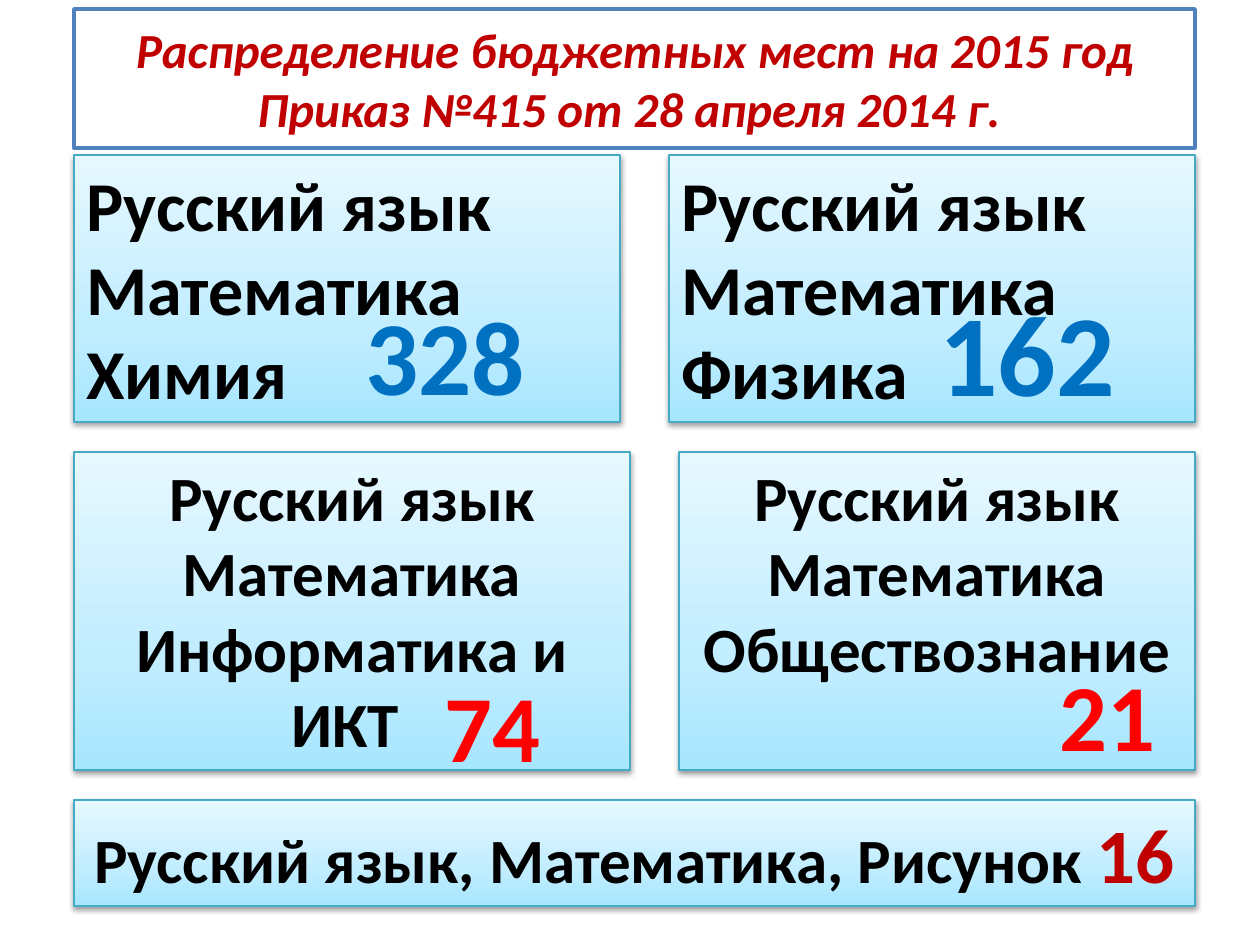
import copy
from dataclasses import dataclass

import lxml.etree
import pptx
import pptx.dml.color
import pptx.enum.shapes
import pptx.enum.text
import pptx.oxml.ns
import pptx.util

ALIGN = pptx.enum.text.PP_ALIGN
ANCHOR = pptx.enum.text.MSO_ANCHOR
EMU_PER_PX = 914400 / 126


@dataclass(frozen=True)
class Theme:
    font: str = "Calibri"
    text: str = "000000"
    accent: str = "C00000"
    blue: str = "0070C0"
    red: str = "FF0000"
    title_fill: str = "FFFFFF"
    title_line: str = "4F81BD"
    card_line: str = "46AAC5"
    card_stops: tuple = ((0, "A7E6FF"), (0.35, "C1EDFF"), (1, "E7F8FF"))
    title_size: int = 28
    large_size: int = 40
    medium_size: int = 36
    total_size: int = 44


THEME = Theme()
LEFT, RIGHT = 74, 1195
TOP_ROW, TOP_HEIGHT = 155, 267
LOWER_ROW, LOWER_HEIGHT = 452, 318


def px(*lengths):
    return [pptx.util.Emu(round(length * EMU_PER_PX)) for length in lengths]


def rgb(code):
    return pptx.dml.color.RGBColor.from_string(code)


def format_run(run, size, color, italic=False):
    run.font.name = THEME.font
    run.font.size = pptx.util.Pt(size)
    run.font.bold = True
    run.font.italic = italic
    run.font.color.rgb = rgb(color)


def write_lines(frame, lines, size, color, align, italic=False):
    frame.text = "\n".join(lines)
    for paragraph in frame.paragraphs:
        paragraph.alignment = align
        for run in paragraph.runs:
            format_run(run, size, color, italic)


def set_line(shape, color, width):
    shape.line.color.rgb = rgb(color)
    shape.line.width = pptx.util.Pt(width)


def fill_gradient(shape):
    """Fill from the darkest stop at the bottom to the lightest at the top."""
    shape.fill.gradient()
    shape.fill.gradient_angle = 90
    stop_list = shape._element.spPr.find(".//" + pptx.oxml.ns.qn("a:gsLst"))
    stop_list.insert(1, copy.deepcopy(stop_list[0]))
    for stop, (position, color) in zip(shape.fill.gradient_stops, THEME.card_stops):
        stop.position = position
        stop.color.rgb = rgb(color)


def add_soft_shadow(shape):
    shape.shadow.inherit = False
    qn = pptx.oxml.ns.qn
    effects = shape._element.spPr.find(qn("a:effectLst"))
    shadow = lxml.etree.SubElement(
        effects, qn("a:outerShdw"), blurRad="40000", dist="20000",
        dir="5400000", rotWithShape="0")
    color = lxml.etree.SubElement(shadow, qn("a:srgbClr"), val="000000")
    lxml.etree.SubElement(color, qn("a:alpha"), val="38000")


def add_title(slide, lines):
    title = slide.shapes.title
    title.left, title.top, title.width, title.height = px(LEFT, 9, RIGHT - LEFT, 139)
    title.fill.solid()
    title.fill.fore_color.rgb = rgb(THEME.title_fill)
    set_line(title, THEME.title_line, 2)
    frame = title.text_frame
    frame.auto_size = pptx.enum.text.MSO_AUTO_SIZE.NONE
    frame.vertical_anchor = ANCHOR.MIDDLE
    write_lines(frame, lines, THEME.title_size, THEME.accent, ALIGN.CENTER, True)


def add_card(slide, box, lines, size, align):
    card = slide.shapes.add_shape(pptx.enum.shapes.MSO_SHAPE.RECTANGLE, *px(*box))
    fill_gradient(card)
    set_line(card, THEME.card_line, 0.75)
    add_soft_shadow(card)
    frame = card.text_frame
    frame.word_wrap = True
    frame.vertical_anchor = ANCHOR.TOP
    write_lines(frame, lines, size, THEME.text, align)
    return card


def add_places(slide, box, count, size, color, wrap):
    """Put the number of funded places over its card."""
    frame = slide.shapes.add_textbox(*px(*box)).text_frame
    frame.word_wrap = wrap
    write_lines(frame, [count], size, color, ALIGN.LEFT)


def add_drawing_card(slide):
    card = add_card(slide, (LEFT, 800, RIGHT - LEFT, 106),
                    ["Русский язык, Математика, Рисунок "],
                    THEME.medium_size, ALIGN.CENTER)
    places = card.text_frame.paragraphs[0].add_run()
    places.text = "16"
    format_run(places, THEME.total_size, THEME.accent)


def main():
    presentation = pptx.Presentation()
    presentation.slide_width, presentation.slide_height = px(1260, 945)
    slide = presentation.slides.add_slide(presentation.slide_layouts[5])

    add_title(slide, ["Распределение бюджетных мест на 2015 год",
                      "Приказ №415 от 28 апреля 2014 г. "])

    common = ["Русский язык", "Математика"]
    top = (TOP_ROW, TOP_HEIGHT, THEME.large_size, ALIGN.LEFT)
    lower = (LOWER_ROW, LOWER_HEIGHT, THEME.medium_size, ALIGN.CENTER)
    for subject, left, right, (y, height, size, align) in (
        ("Химия", LEFT, 620, top),
        ("Физика", 669, RIGHT, top),
        ("Информатика и ИКТ ", LEFT, 630, lower),
        ("Обществознание", 679, RIGHT, lower),
    ):
        add_card(slide, (left, y, right - left, height),
                 common + [subject], size, align)

    for count, box, size, color, wrap in (
        ("74", (432, 662, 122, 127), 54, THEME.red, False),
        ("21", (1047, 651, 161, 127), 54, THEME.red, True),
        ("328", (353, 284, 318, 140), 60, THEME.blue, True),
        ("162", (927, 275, 203, 152), 66, THEME.blue, False),
    ):
        add_places(slide, box, count, size, color, wrap)

    add_drawing_card(slide)
    presentation.save("out.pptx")


if __name__ == "__main__":
    main()
